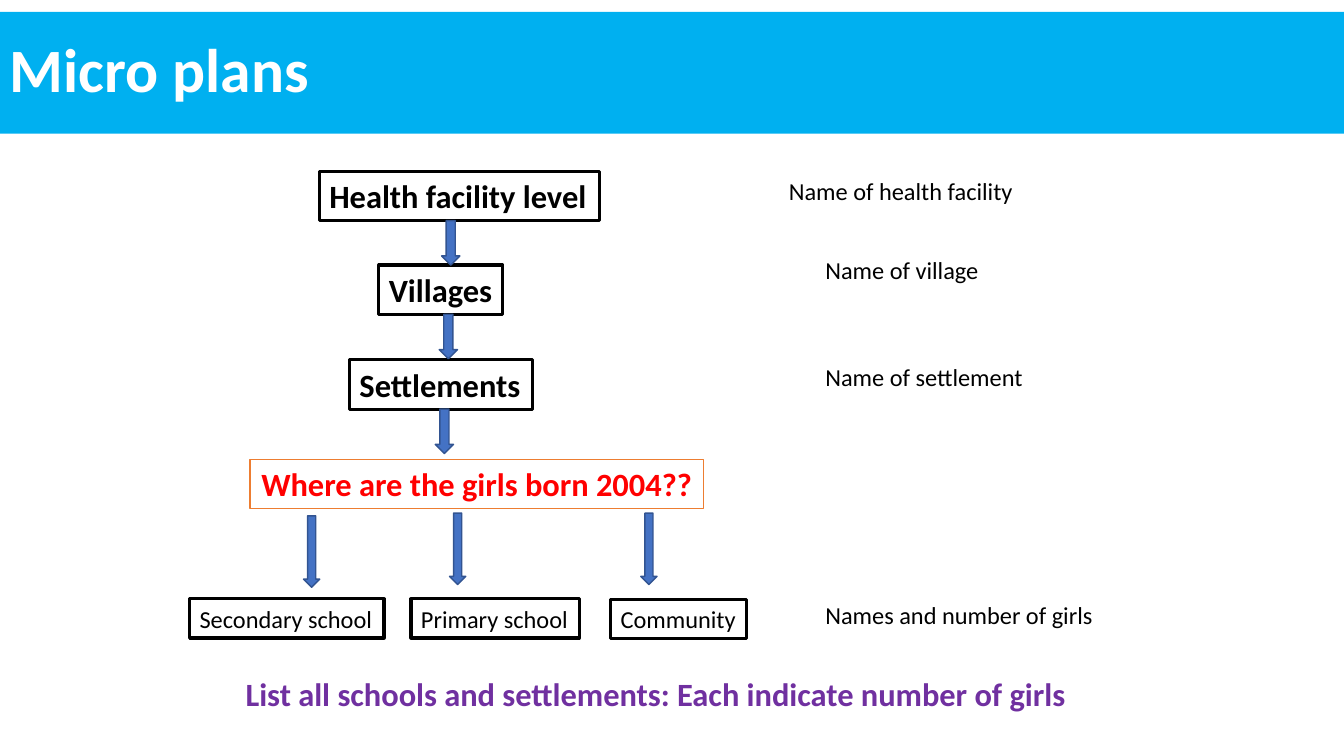
from dataclasses import dataclass

from pptx import Presentation
from pptx.dml.color import RGBColor
from pptx.enum.shapes import MSO_SHAPE
from pptx.enum.text import MSO_ANCHOR, MSO_AUTO_SIZE, PP_ALIGN
from pptx.slide import Slide
from pptx.util import Cm, Pt

BLACK, WHITE = "000000", "FFFFFF"
LARGE, SMALL = 23.2, 17.4
LARGE_HEIGHT, SMALL_HEIGHT = 1.24, 0.99


@dataclass(frozen=True)
class Label:
    """Text with an optional fill and outline; lengths in cm, sizes in points."""
    text: str
    left: float
    top: float
    width: float
    height: float = SMALL_HEIGHT
    size: float = SMALL
    bold: bool = False
    color: str = BLACK
    fill: str | None = None
    line: str | None = None
    line_width: float = 2.25
    align: PP_ALIGN = PP_ALIGN.LEFT
    wrap: bool = False


@dataclass(frozen=True)
class Arrow:
    left: float
    top: float
    width: float
    height: float


def rgb(color: str) -> RGBColor:
    return RGBColor.from_string(color)


def add_label(slide: Slide, label: Label):
    box = slide.shapes.add_textbox(Cm(label.left), Cm(label.top), Cm(label.width), Cm(label.height))
    if label.fill:
        box.fill.solid()
        box.fill.fore_color.rgb = rgb(label.fill)
    if label.line:
        box.line.color.rgb = rgb(label.line)
        box.line.width = Pt(label.line_width)
    frame = box.text_frame
    frame.word_wrap = label.wrap
    frame.auto_size = MSO_AUTO_SIZE.SHAPE_TO_FIT_TEXT
    frame.text = label.text
    paragraph = frame.paragraphs[0]
    paragraph.alignment = label.align
    font = paragraph.font
    font.name = "Calibri"
    font.size = Pt(label.size)
    font.bold = label.bold
    font.color.rgb = rgb(label.color)
    return box


def add_down_arrow(slide: Slide, arrow: Arrow) -> None:
    shape = slide.shapes.add_shape(
        MSO_SHAPE.DOWN_ARROW, Cm(arrow.left), Cm(arrow.top), Cm(arrow.width), Cm(arrow.height))
    shape.shadow.inherit = False
    shape.fill.solid()
    shape.fill.fore_color.rgb = rgb("4472C4")
    shape.line.color.rgb = rgb("325491")
    shape.line.width = Pt(1)


def add_title(slide: Slide) -> None:
    title = add_label(slide, Label("Micro plans", 0, 0.3, 33.87, 3.07, size=44, bold=True,
                                   color=WHITE, fill="00B0F0", wrap=True))
    title.text_frame.auto_size = MSO_AUTO_SIZE.NONE
    title.text_frame.vertical_anchor = MSO_ANCHOR.MIDDLE
    title.text_frame.paragraphs[0].line_spacing = 0.9


LEVELS = [
    Label(text, left, top, width, LARGE_HEIGHT, LARGE, bold=True, line=BLACK)
    for text, left, top, width in [
        ("Health facility level", 8.05, 4.32, 7.06),
        ("Villages", 9.55, 6.68, 3.12),
        ("Settlements", 8.81, 9.07, 4.62),
    ]
]
QUESTION = Label("Where are the girls born 2004??", 6.3, 11.58, 11.43, LARGE_HEIGHT, LARGE,
                 bold=True, color="FF0000", fill=WHITE, line="ED7D31", line_width=1,
                 align=PP_ALIGN.CENTER, wrap=True)
PLACES = [
    Label("Secondary school", 4.78, 15.09, 4.9, line=BLACK),
    Label("Primary school", 10.36, 15.09, 4.24, line=BLACK),
    Label("Community", 15.39, 15.11, 3.43, line=BLACK),
]
RECORDS = [
    Label("Name of health facility", 19.63, 4.32, 6.2, wrap=True),
    Label("Name of village", 20.55, 6.3, 4.39),
    Label("Name of settlement", 20.55, 8.99, 5.54),
    Label("Names and number of girls", 20.55, 15.01, 7.32),
]
INSTRUCTION = Label("List all schools and settlements: Each indicate number of girls",
                    5.94, 16.87, 21.44, LARGE_HEIGHT, LARGE, bold=True, color="7030A0")

LEVEL_ARROWS = [
    Arrow(left, level.top + level.height, 0.46, 1.12)
    for left, level in zip((11.13, 11.07, 10.97), LEVELS)
]
PLACE_ARROWS = [
    Arrow(left, top, 0.41, 1.8) for left, top in ((7.65, 13), (11.33, 12.93), (16.15, 12.93))
]


def main() -> None:
    presentation = Presentation()
    presentation.slide_width, presentation.slide_height = Cm(33.87), Cm(19.05)
    slide = presentation.slides.add_slide(presentation.slide_layouts[6])
    add_title(slide)
    for label in [*LEVELS, QUESTION, *PLACES]:
        add_label(slide, label)
    for arrow in LEVEL_ARROWS + PLACE_ARROWS:
        add_down_arrow(slide, arrow)
    for label in [*RECORDS, INSTRUCTION]:
        add_label(slide, label)
    presentation.save("out.pptx")


if __name__ == "__main__":
    main()
